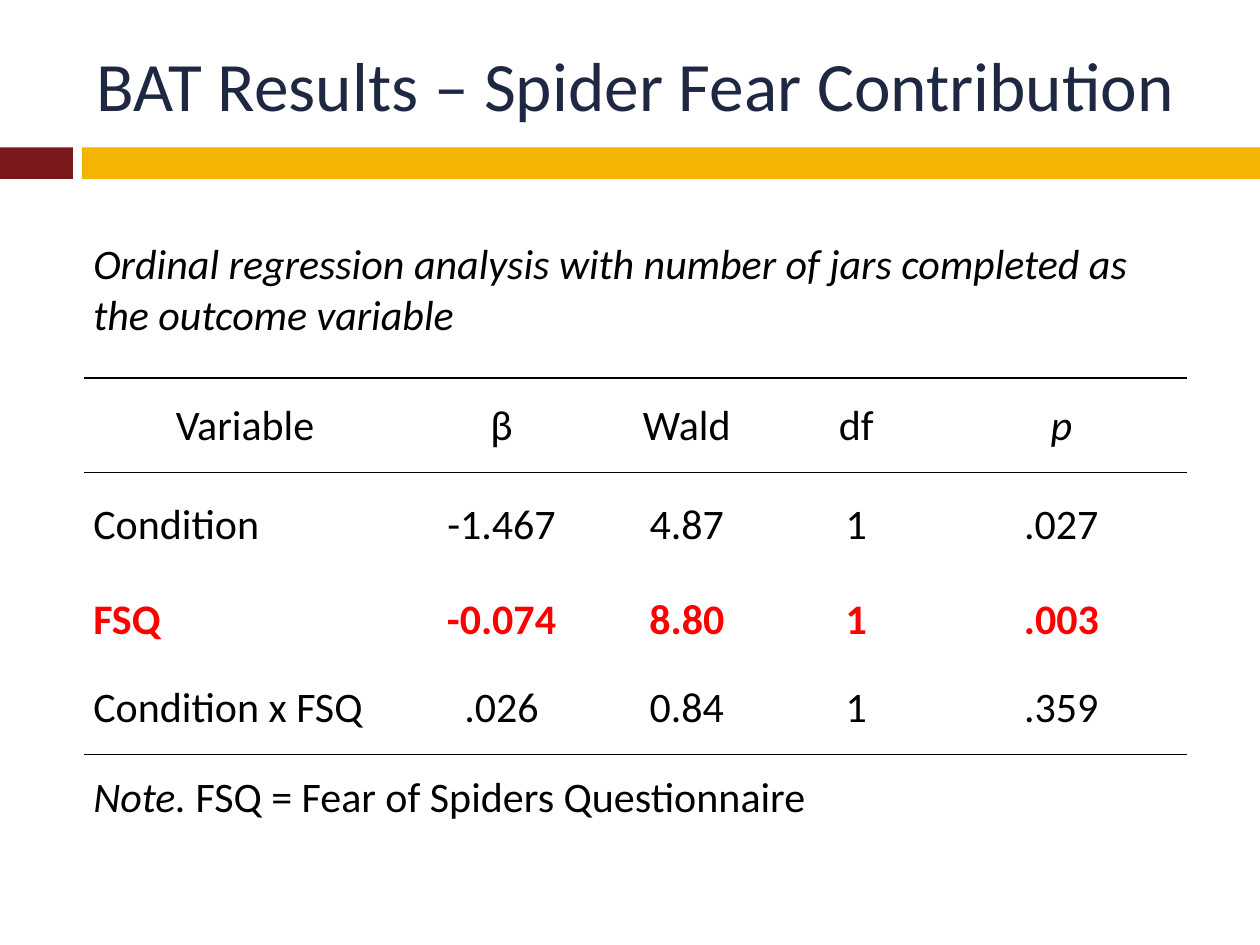
from dataclasses import dataclass

from lxml.etree import SubElement
from pptx import Presentation
from pptx.dml.color import RGBColor
from pptx.enum.shapes import MSO_SHAPE as Shape
from pptx.enum.text import MSO_ANCHOR as Anchor, MSO_AUTO_SIZE as AutoSize, PP_ALIGN as Align
from pptx.oxml.ns import qn
from pptx.util import Cm, Pt

COLORS = {
    "title": "1E2842",
    "text": "000000",
    "highlight": "FF0000",
    "maroon": "79191B",
    "gold": "F3B403",
}
FONT = "Calibri"
COLUMN_WIDTHS = (6.48, 3.86, 3.61, 3.22, 5.05)


@dataclass
class Band:
    left: float
    width: float
    color: str


@dataclass
class Row:
    height: float
    texts: tuple
    color: str = "text"
    bold: bool = False
    header: bool = False
    anchor: Anchor = Anchor.MIDDLE
    rule_above: bool = False
    rule_below: bool = False


BANDS = (Band(0, 1.47, "maroon"), Band(1.65, 23.75, "gold"))
CAPTION = "Ordinal regression analysis with number of jars completed as the outcome variable"
ROWS = (
    Row(2.82, (CAPTION,), anchor=Anchor.TOP, rule_below=True),
    Row(1.9, ("Variable", "β", "Wald", "df", "p"), header=True, rule_above=True, rule_below=True),
    Row(2.11, ("Condition", "-1.467", "4.87", "1", ".027"), rule_above=True),
    Row(1.7, ("FSQ", "-0.074", "8.80", "1", ".003"), color="highlight", bold=True),
    Row(1.88, ("Condition x FSQ", ".026", "0.84", "1", ".359"), rule_below=True),
    Row(1.4, ("Note. FSQ = Fear of Spiders Questionnaire",), anchor=Anchor.BOTTOM, rule_above=True),
)
ITALIC_STARTS = (CAPTION, "p", "Note. ")


def rgb(name: str) -> RGBColor:
    return RGBColor.from_string(COLORS[name])


def format_span(span, size: float, color: str, bold: bool = False, italic: bool = False) -> None:
    span.font.name = FONT
    span.font.size = Pt(size)
    span.font.color.rgb = rgb(color)
    span.font.bold = bold
    span.font.italic = italic


def draw_band(page, band: Band) -> None:
    box = page.shapes.add_shape(Shape.RECTANGLE, Cm(band.left), Cm(2.97), Cm(band.width), Cm(0.64))
    box.shadow.inherit = False
    box.fill.solid()
    box.fill.fore_color.rgb = rgb(band.color)
    box.line.fill.background()


def set_borders(cell, above: bool, below: bool) -> None:
    """Draw the horizontal rules of a cell and clear its other borders."""
    properties = cell._tc.get_or_add_tcPr()
    sides = (("a:lnL", False), ("a:lnR", False), ("a:lnT", above), ("a:lnB", below))
    for position, (tag, visible) in enumerate(sides):
        line = SubElement(properties, qn(tag), w=str(Pt(1)))
        if visible:
            fill = SubElement(line, qn("a:solidFill"))
            SubElement(fill, qn("a:srgbClr"), val=COLORS["text"])
        else:
            SubElement(line, qn("a:noFill"))
        properties.insert(position, line)


def write_cell(cell, text: str, row: Row, column: int) -> None:
    para = cell.text_frame.paragraphs[0]
    para.alignment = Align.CENTER if row.header or column else Align.LEFT
    # An opening in italics is its own run, the remainder stays upright
    opening = next((start for start in ITALIC_STARTS if text.startswith(start)), "")
    for part, italic in ((opening, True), (text[len(opening):], False)):
        if part:
            span = para.add_run()
            span.text = part
            format_span(span, 24, row.color, row.bold, italic)


def draw_table(page) -> None:
    frame = page.shapes.add_table(
        len(ROWS), len(COLUMN_WIDTHS), Cm(1.7), Cm(4.8),
        Cm(sum(COLUMN_WIDTHS)), Cm(sum(row.height for row in ROWS)))
    table = frame.table
    table.first_row = False
    table.horz_banding = False
    for column, width in zip(table.columns, COLUMN_WIDTHS):
        column.width = Cm(width)
    for index, row in enumerate(ROWS):
        table.rows[index].height = Cm(row.height)
        cells = list(table.rows[index].cells)
        if len(row.texts) == 1:
            cells[0].merge(cells[-1])
        for cell in cells:
            cell.fill.background()
            cell.vertical_anchor = row.anchor
            cell.margin_left = cell.margin_right = Cm(0.18)
            cell.margin_top, cell.margin_bottom = Cm(0.03), 0
            set_borders(cell, row.rule_above, row.rule_below)
        for column, text in enumerate(row.texts):
            write_cell(cells[column], text, row, column)


def draw_title(page) -> None:
    title = page.shapes.title
    title.left, title.top, title.width, title.height = Cm(1.7), Cm(0.64), Cm(22.66), Cm(2.11)
    title.text_frame.text = "BAT Results – Spider Fear Contribution"
    title.text_frame.auto_size = AutoSize.NONE
    title.text_frame.vertical_anchor = Anchor.MIDDLE
    para = title.text_frame.paragraphs[0]
    para.alignment = Align.LEFT
    format_span(para.runs[0], 39.6, "title")


def main() -> None:
    deck = Presentation()
    deck.slide_width, deck.slide_height = Cm(25.4), Cm(19.05)
    page = deck.slides.add_slide(deck.slide_layouts[5])

    # Title and the two-coloured band below it
    draw_title(page)
    for band in BANDS:
        draw_band(page, band)

    # Regression results
    draw_table(page)
    deck.save("out.pptx")


if __name__ == "__main__":
    main()
